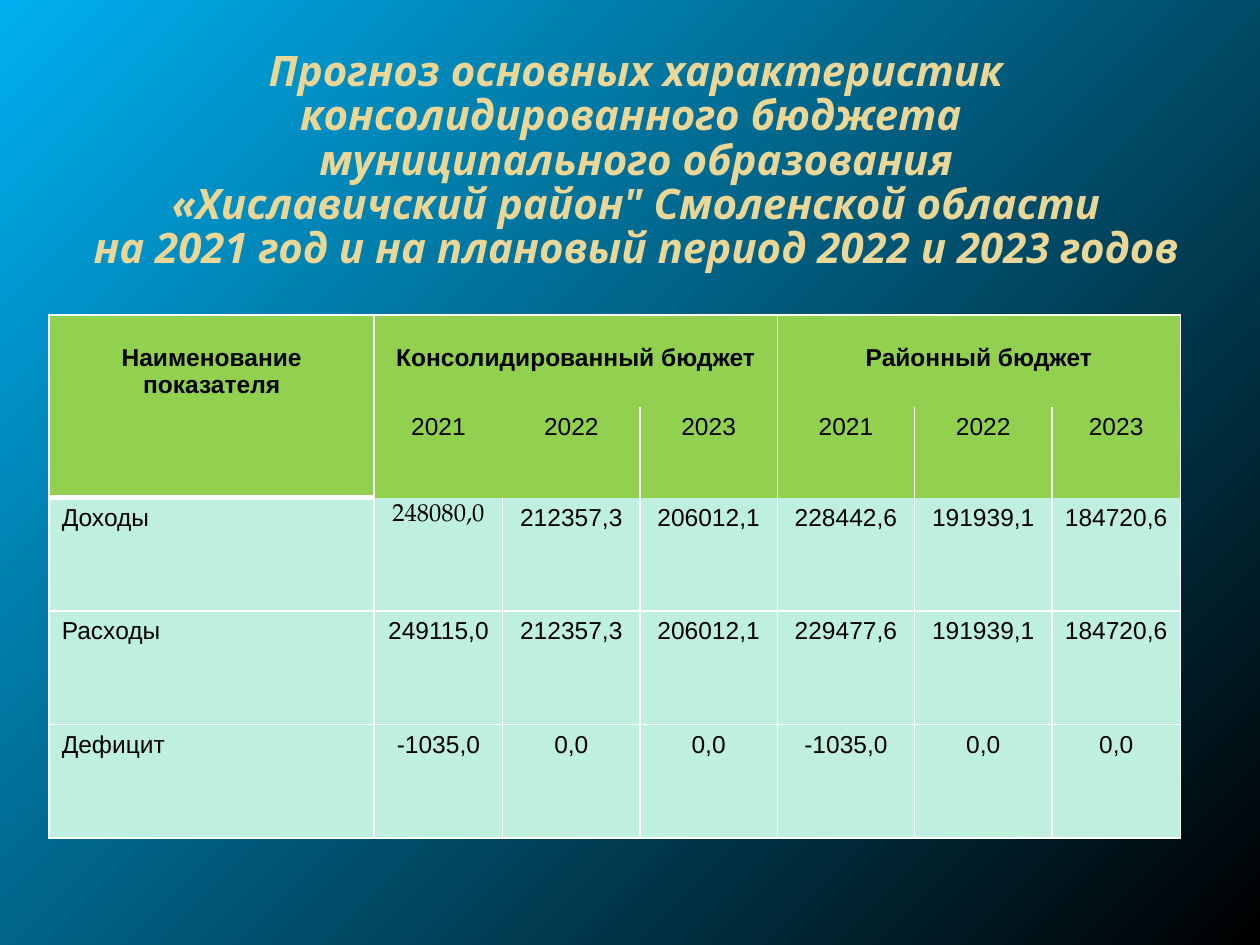
from lxml import etree
from pptx import Presentation
from pptx import util as u
from pptx.dml.color import RGBColor
from pptx.enum import text
from pptx.oxml import ns

SKY = RGBColor(0x00, 0xB0, 0xF0)
BLACK = RGBColor(0x00, 0x00, 0x00)
WHITE = RGBColor(0xFF, 0xFF, 0xFF)
GOLD = RGBColor(0xEA, 0xD6, 0x96)
GREEN = RGBColor(0x92, 0xD0, 0x50)
MINT = RGBColor(0xBF, 0xEF, 0xDF)

TITLE = (
    "Прогноз основных характеристик консолидированного бюджета \v"
    "муниципального образования\v"
    " «Хиславичский район\" Смоленской области \v"
    "на 2021 год и на плановый период 2022 и 2023 годов"
)
YEARS = ["2021", "2022", "2023"]
ROWS = [
    ["Наименование показателя", "Консолидированный бюджет", "", "", "Районный бюджет", "", ""],
    [""] + YEARS * 2,
    ["Доходы", "248080,0", "212357,3", "206012,1", "228442,6", "191939,1", "184720,6"],
    ["Расходы", "249115,0", "212357,3", "206012,1", "229477,6", "191939,1", "184720,6"],
    ["Дефицит", "-1035,0", "0,0", "0,0", "-1035,0", "0,0", "0,0"],
]
MERGES = [((0, 0), (1, 0)), ((0, 1), (0, 3)), ((0, 4), (0, 6))]
COL_WIDTHS = [2.58, 1.02, 1.09, 1.09, 1.09, 1.09, 1.02]
ROW_HEIGHTS = [0.73, 0.72, 0.9, 0.9, 0.9]
HEADER_ROWS = 2


def horizontal_edge(row, col):
    if row == HEADER_ROWS:
        return 0 if col else 3
    return 0 if row == 1 else 1


def vertical_edge(row, col):
    return 0 if row == 1 and col in (1, 2) else 1


class Deck:
    font = "Arial"
    size = u.Pt(14)

    def __init__(self, prs):
        self.s = prs.slides.add_slide(prs.slide_layouts[5])

    def background(self, start, end):
        fill = self.s.background.fill
        fill.gradient()
        fill.gradient_angle = 315
        for stop, color, position in zip(fill.gradient_stops, (start, end), (0, 1)):
            stop.color.rgb = color
            stop.position = position

    def style(self, p, font, size, color, bold=False, italic=False):
        f = p.font
        f.name, f.size, f.bold, f.italic = font, size, bold, italic
        f.color.rgb = color

    def title(self, words, left, top, width, height):
        sp = self.s.shapes.title
        sp.left, sp.top = u.Inches(left), u.Inches(top)
        sp.width, sp.height = u.Inches(width), u.Inches(height)
        tf = sp.text_frame
        tf.text = words
        tf.word_wrap = True
        tf.auto_size = text.MSO_AUTO_SIZE.NONE
        tf.vertical_anchor = text.MSO_ANCHOR.MIDDLE
        p = tf.paragraphs[0]
        p.alignment = text.PP_ALIGN.CENTER
        p.line_spacing = 0.88
        self.style(p, "Open Sans", u.Pt(24), GOLD, True, True)

    def borders(self, cell, weights):
        tc_pr = cell._tc.get_or_add_tcPr()
        for i, (side, weight) in enumerate(weights.items()):
            ln = etree.Element(ns.qn(f"a:ln{side}"), w=str(u.Pt(weight)))
            if weight:
                fill = etree.SubElement(ln, ns.qn("a:solidFill"))
                etree.SubElement(fill, ns.qn("a:srgbClr"), val=str(WHITE))
            else:
                etree.SubElement(ln, ns.qn("a:noFill"))
            tc_pr.insert(i, ln)

    def cell(self, cell, words, row, col):
        cell.fill.solid()
        cell.fill.fore_color.rgb = GREEN if row < HEADER_ROWS else MINT
        bottom = row + 1
        if cell.is_merge_origin:
            bottom = row + cell.span_height
        self.borders(cell, {
            "L": vertical_edge(row, col),
            "R": vertical_edge(row, col + 1),
            "T": horizontal_edge(row, col),
            "B": horizontal_edge(bottom, col),
        })
        if row == 0:
            cell.margin_top = u.Inches(0.23)
        cell.text = words
        p = cell.text_frame.paragraphs[0]
        if row < HEADER_ROWS or col:
            p.alignment = text.PP_ALIGN.CENTER
        font = "TeX Gyre Pagella" if (row, col) == (2, 1) else self.font
        self.style(p, font, self.size, BLACK, row == 0)

    def table(self, rows, left, top):
        frame = self.s.shapes.add_table(
            len(rows), len(rows[0]), u.Inches(left), u.Inches(top),
            u.Inches(sum(COL_WIDTHS)), u.Inches(sum(ROW_HEIGHTS)))
        table = frame.table
        table.first_row = table.horz_banding = False
        for column, width in zip(table.columns, COL_WIDTHS):
            column.width = u.Inches(width)
        for row, height in zip(table.rows, ROW_HEIGHTS):
            row.height = u.Inches(height)
        for first, last in MERGES:
            table.cell(*first).merge(table.cell(*last))
        for r, row in enumerate(rows):
            for c, words in enumerate(row):
                self.cell(table.cell(r, c), words, r, c)


def main():
    prs = Presentation()
    prs.slide_width, prs.slide_height = u.Inches(10), u.Inches(7.5)
    deck = Deck(prs)
    deck.background(SKY, BLACK)
    deck.title(TITLE, 0.55, 0.31, 9, 1.95)
    deck.table(ROWS, 0.39, 2.5)
    prs.save("out.pptx")


if __name__ == "__main__":
    main()
